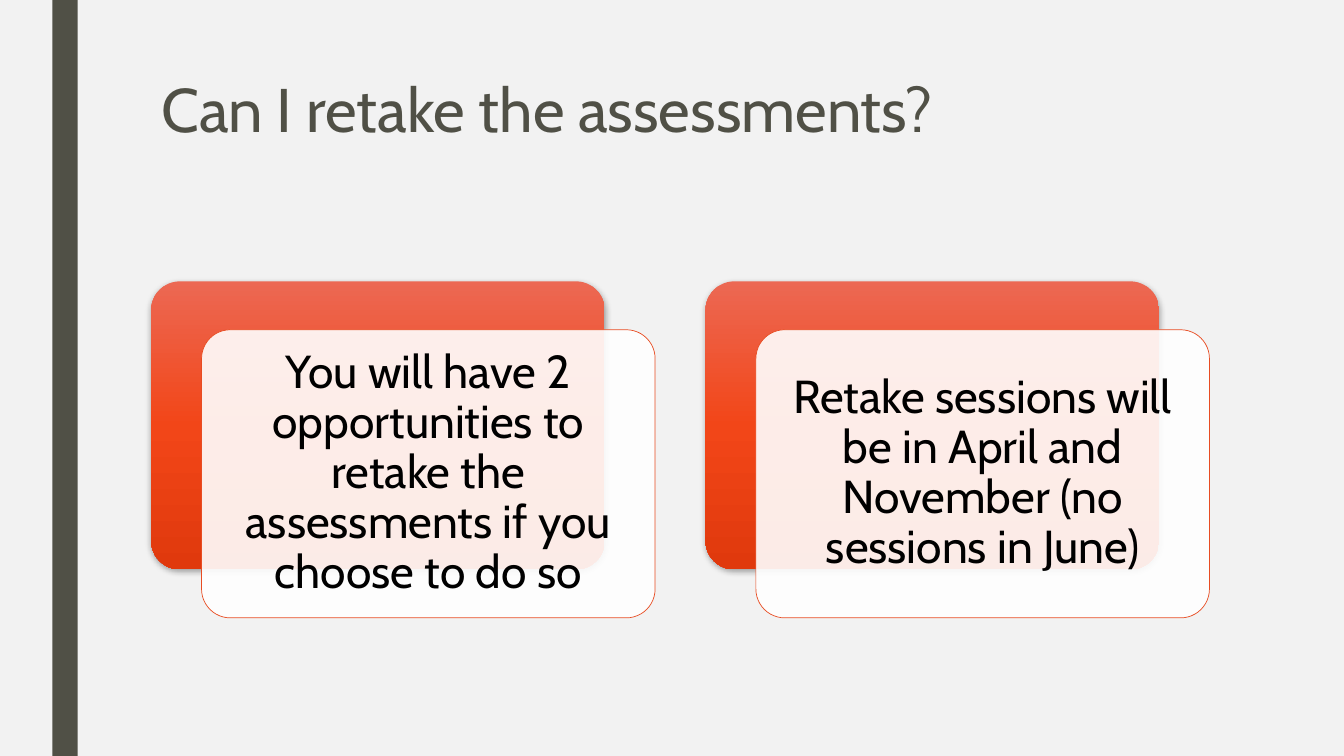
from copy import deepcopy

from lxml import etree
from pptx import Presentation
from pptx import util as u
from pptx.dml.color import RGBColor
from pptx.enum import shapes, text
from pptx.oxml.ns import qn

FONT = "Cabin"
OLIVE = "505046"
CARD_GRADIENT = [(0, "EC6853"), (0.5, "F24618"), (1, "E0390D")]
CARDS = [
    "You will have 2 opportunities to retake the assessments if you choose to do so",
    "Retake sessions will be in April and November (no sessions in June)",
]


def rgb(value):
    return RGBColor.from_string(value)


def add_box(s, kind, left, top, width, height):
    sp = s.shapes.add_shape(kind, u.Cm(left), u.Cm(top), u.Cm(width), u.Cm(height))
    sp.shadow.inherit = False
    sp.line.fill.background()
    return sp


def write(tf, words, size, color, spacing):
    tf.word_wrap = True
    p = tf.paragraphs[0]
    p.text = words
    p.line_spacing = spacing
    p.font.name = FONT
    p.font.size = u.Pt(size)
    p.font.color.rgb = rgb(color)
    return p


def set_gradient(sp, stops):
    sp.fill.gradient()
    sp.fill.gradient_angle = 270
    gs_lst = sp._element.spPr.find(".//" + qn("a:gsLst"))
    gs_lst.append(deepcopy(gs_lst[0]))
    for stop, (position, color) in zip(sp.fill.gradient_stops, stops):
        stop.position = position
        stop.color.rgb = rgb(color)


def set_alpha(color_element, percent):
    etree.SubElement(color_element, qn("a:alpha"), val=str(percent * 1000))


def set_shadow(sp, color, percent, blur, distance):
    effects = sp._element.spPr.find(qn("a:effectLst"))
    shadow = etree.SubElement(
        effects, qn("a:outerShdw"), blurRad=str(u.Pt(blur)), dist=str(u.Pt(distance)),
        dir="5400000", algn="ctr", rotWithShape="0")
    set_alpha(etree.SubElement(shadow, qn("a:srgbClr"), val=color), percent)


def add_side_bar(s, left, top, width, height):
    sp = add_box(s, shapes.MSO_SHAPE.RECTANGLE, left, top, width, height)
    sp.fill.solid()
    sp.fill.fore_color.rgb = rgb(OLIVE)


def add_title(s, left, top, width, height, words):
    sp = s.shapes.add_textbox(u.Cm(left), u.Cm(top), u.Cm(width), u.Cm(height))
    write(sp.text_frame, words, 44, OLIVE, 0.89)


def add_card(s, left, top, width, height, words):
    dx, dy = 1.27, 1.22
    w, h = width - dx, height - dy
    rounded = shapes.MSO_SHAPE.ROUNDED_RECTANGLE

    back = add_box(s, rounded, left, top, w, h)
    back.adjustments[0] = 0.1
    set_gradient(back, CARD_GRADIENT)
    set_shadow(back, "000000", 35, 4.5, 1.5)

    front = add_box(s, rounded, left + dx, top + dy, w, h)
    front.adjustments[0] = 0.1
    front.fill.solid()
    front.fill.fore_color.rgb = rgb("FFFFFF")
    set_alpha(front._element.spPr.find(qn("a:solidFill"))[0], 90)
    front.line.color.rgb = rgb("E84C22")
    front.line.width = u.Pt(0.5)

    tf = front.text_frame
    tf.margin_left = tf.margin_right = tf.margin_top = tf.margin_bottom = u.Cm(0.36)
    tf.vertical_anchor = text.MSO_ANCHOR.MIDDLE
    p = write(tf, words, 33, "000000", 0.9)
    p.alignment = text.PP_ALIGN.CENTER


def add_cards(s, left, top, width, height, cards):
    gap = 1.27
    card_width = (width - gap * (len(cards) - 1)) / len(cards)
    for i, words in enumerate(cards):
        add_card(s, left + i * (card_width + gap), top, card_width, height, words)


def main():
    prs = Presentation()
    prs.slide_width, prs.slide_height = u.Cm(33.87), u.Cm(19.05)
    s = prs.slides.add_slide(prs.slide_layouts[6])
    s.background.fill.solid()
    s.background.fill.fore_color.rgb = rgb("F2F2F2")
    add_side_bar(s, 1.32, 0, 0.64, 19.05)
    add_title(s, 3.81, 1.9, 26.67, 4.11, "Can I retake the assessments?")
    add_cards(s, 3.81, 7.09, 26.67, 8.48, CARDS)
    prs.save("out.pptx")


if __name__ == "__main__":
    main()
